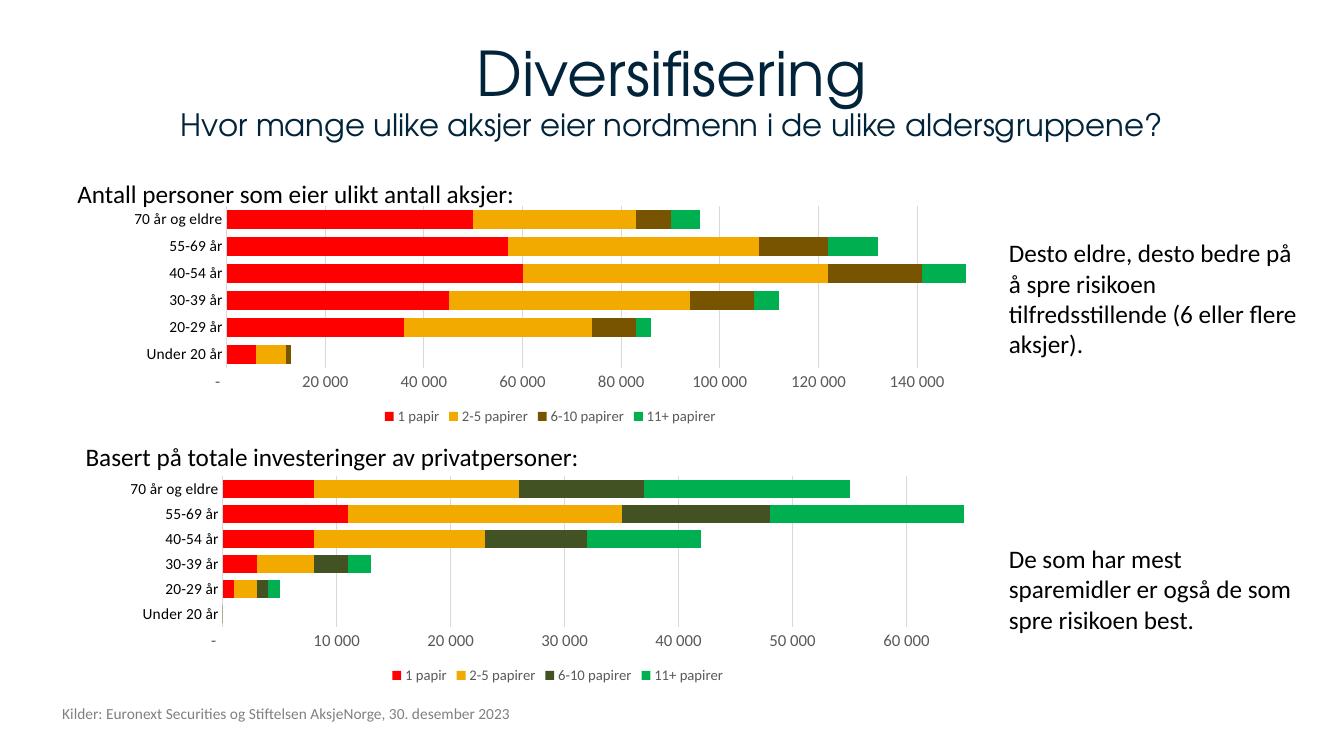
from lxml import etree
from pptx import Presentation
from pptx.chart.data import CategoryChartData
from pptx.dml.color import RGBColor
from pptx.enum.chart import XL_CHART_TYPE, XL_LEGEND_POSITION, XL_TICK_MARK
from pptx.enum.text import MSO_ANCHOR, PP_ALIGN
from pptx.oxml import parse_xml
from pptx.util import Pt

STACKED = XL_CHART_TYPE.BAR_STACKED
BOTTOM = XL_LEGEND_POSITION.BOTTOM
NO_TICK = XL_TICK_MARK.NONE
MIDDLE = MSO_ANCHOR.MIDDLE
LEFT, CENTER = PP_ALIGN.LEFT, PP_ALIGN.CENTER

BODY_FONT, TITLE_FONT = "Calibri", "TeX Gyre Adventor"
COLORS = {
    "navy": "02243A", "black": "000000", "source": "808080", "label": "595959",
    "grid": "D9D9D9", "red": "FF0000", "amber": "F2A900", "brown": "795400",
    "olive": "425222", "green": "00B050",
}

TITLE = "Diversifisering"
SUBTITLE = "Hvor mange ulike aksjer eier nordmenn i de ulike aldersgruppene?"
TITLE_BOX = (48, 21.6, 864, 90)

CAPTIONS = [
    ("Kilder: Euronext Securities og Stiftelsen AksjeNorge, 30. desember 2023",
     (37.4, 499.7, 348.5, 20.9), 11, "source"),
    ("Antall personer som eier ulikt antall aksjer:",
     (48.2, 123.8, 468, 28.8), 18, "black"),
    ("Basert på totale investeringer av privatpersoner:",
     (54, 311.8, 516, 28.8), 18, "black"),
]
COMMENTS = [
    "Desto eldre, desto bedre på å spre risikoen tilfredsstillende (6 eller flere aksjer).",
    "De som har mest sparemidler er også de som spre risikoen best.",
]
COMMENT_BOX = (713.5, 166.3, 225.4, 290.9)
COMMENT_GAP = 132

AGES = ["Under 20 år", "20-29 år", "30-39 år", "40-54 år", "55-69 år", "70 år og eldre"]
HOLDINGS = ["1 papir", "2-5 papirer", "6-10 papirer", "11+ papirer"]
NUMBER_FORMAT = r'_-* #\ ##0_-;\-* #\ ##0_-;_-* "-"??_-;_-'
CHARTS = [
    {
        "box": (83.5, 144, 619.2, 162.7), "maximum": 150000, "step": 20000, "plot": None,
        "fills": ["red", "amber", "brown", "green"],
        "values": [
            [6000, 36000, 45000, 60000, 57000, 50000],
            [6000, 38000, 49000, 62000, 51000, 33000],
            [1000, 9000, 13000, 19000, 14000, 7000],
            [0, 3000, 5000, 10000, 10000, 6000],
        ],
    },
    {
        "box": (83.5, 329, 630, 162.7), "maximum": 65000, "step": 10000,
        "plot": {"x": 0.12, "y": 0.07, "w": 0.84, "h": 0.66},
        "fills": ["red", "amber", "olive", "green"],
        "values": [
            [0, 1000, 3000, 8000, 11000, 8000],
            [0, 2000, 5000, 15000, 24000, 18000],
            [0, 1000, 3000, 9000, 13000, 11000],
            [0, 1000, 2000, 10000, 20000, 18000],
        ],
    },
]
CHART_NS = "http://schemas.openxmlformats.org/drawingml/2006/chart"


def rgb(name):
    return RGBColor.from_string(COLORS[name])


def points(box):
    return [Pt(length) for length in box]


def style_font(font, size, color, name=BODY_FONT):
    font.size, font.name, font.bold = Pt(size), name, False
    font.color.rgb = rgb(color)


def add_text(slide, box, paragraphs, size, color, gap=0, font_name=BODY_FONT, align=LEFT):
    frame = slide.shapes.add_textbox(*points(box)).text_frame
    frame.word_wrap = True
    for index, text in enumerate(paragraphs):
        paragraph = frame.add_paragraph() if index else frame.paragraphs[0]
        paragraph.text = text
        paragraph.alignment = align
        style_font(paragraph.font, size, color, font_name)
        if index:
            paragraph.space_before = Pt(gap)
    return frame


def add_title(slide):
    frame = add_text(slide, TITLE_BOX, [TITLE], 44, "navy", font_name=TITLE_FONT, align=CENTER)
    frame.vertical_anchor = MIDDLE
    heading = frame.paragraphs[0]
    heading.line_spacing = 0.9
    heading.add_line_break()
    subtitle = heading.add_run()
    subtitle.text = SUBTITLE
    subtitle.font.size = Pt(22)


def set_plot_layout(chart, plot):
    layout = parse_xml(f'<c:layout xmlns:c="{CHART_NS}"><c:manualLayout/></c:layout>')
    settings = [("layoutTarget", "inner"), ("xMode", "edge"), ("yMode", "edge"), *plot.items()]
    for tag, value in settings:
        etree.SubElement(layout[0], f"{{{CHART_NS}}}{tag}").set("val", str(value))
    area = chart.element.find(f".//{{{CHART_NS}}}plotArea")
    for existing in area.findall(f"{{{CHART_NS}}}layout"):
        area.remove(existing)
    area.insert(0, layout)


def style_axes(chart, maximum, step):
    ages, amounts = chart.category_axis, chart.value_axis
    for axis, size, color in ((ages, 11, "black"), (amounts, 12, "label")):
        axis.major_tick_mark = axis.minor_tick_mark = NO_TICK
        style_font(axis.tick_labels.font, size, color)
    ages.has_major_gridlines = False
    amounts.has_major_gridlines = True
    for line in (ages.format.line, amounts.major_gridlines.format.line):
        line.color.rgb = rgb("grid")
        line.width = Pt(0.75)
    amounts.format.line.fill.background()
    amounts.minimum_scale, amounts.maximum_scale = 0, maximum
    amounts.major_unit = step
    amounts.tick_labels.number_format = NUMBER_FORMAT
    amounts.tick_labels.number_format_is_linked = False


def add_holdings_chart(slide, content):
    data = CategoryChartData(number_format=NUMBER_FORMAT)
    data.categories = AGES
    for holding, values in zip(HOLDINGS, content["values"]):
        data.add_series(holding, values)
    chart = slide.shapes.add_chart(STACKED, *points(content["box"]), data).chart
    style_font(chart.font, 10, "black")
    chart.has_title = False
    chart.has_legend = True
    chart.legend.position = BOTTOM
    chart.legend.include_in_layout = False
    style_font(chart.legend.font, 10.5, "label")
    bars = chart.plots[0]
    bars.gap_width, bars.overlap = 40, 100
    bars.vary_by_categories = False
    for series, color in zip(bars.series, content["fills"]):
        series.format.fill.solid()
        series.format.fill.fore_color.rgb = rgb(color)
        series.invert_if_negative = False
    style_axes(chart, content["maximum"], content["step"])
    if content["plot"]:
        set_plot_layout(chart, content["plot"])


def main():
    deck = Presentation()
    deck.slide_width, deck.slide_height = Pt(960), Pt(540)
    slide = deck.slides.add_slide(deck.slide_layouts[6])
    add_title(slide)
    for text, box, size, color in CAPTIONS:
        add_text(slide, box, [text], size, color)
    add_text(slide, COMMENT_BOX, COMMENTS, 18, "black", gap=COMMENT_GAP)
    for content in CHARTS:
        add_holdings_chart(slide, content)
    deck.save("out.pptx")


if __name__ == "__main__":
    main()
